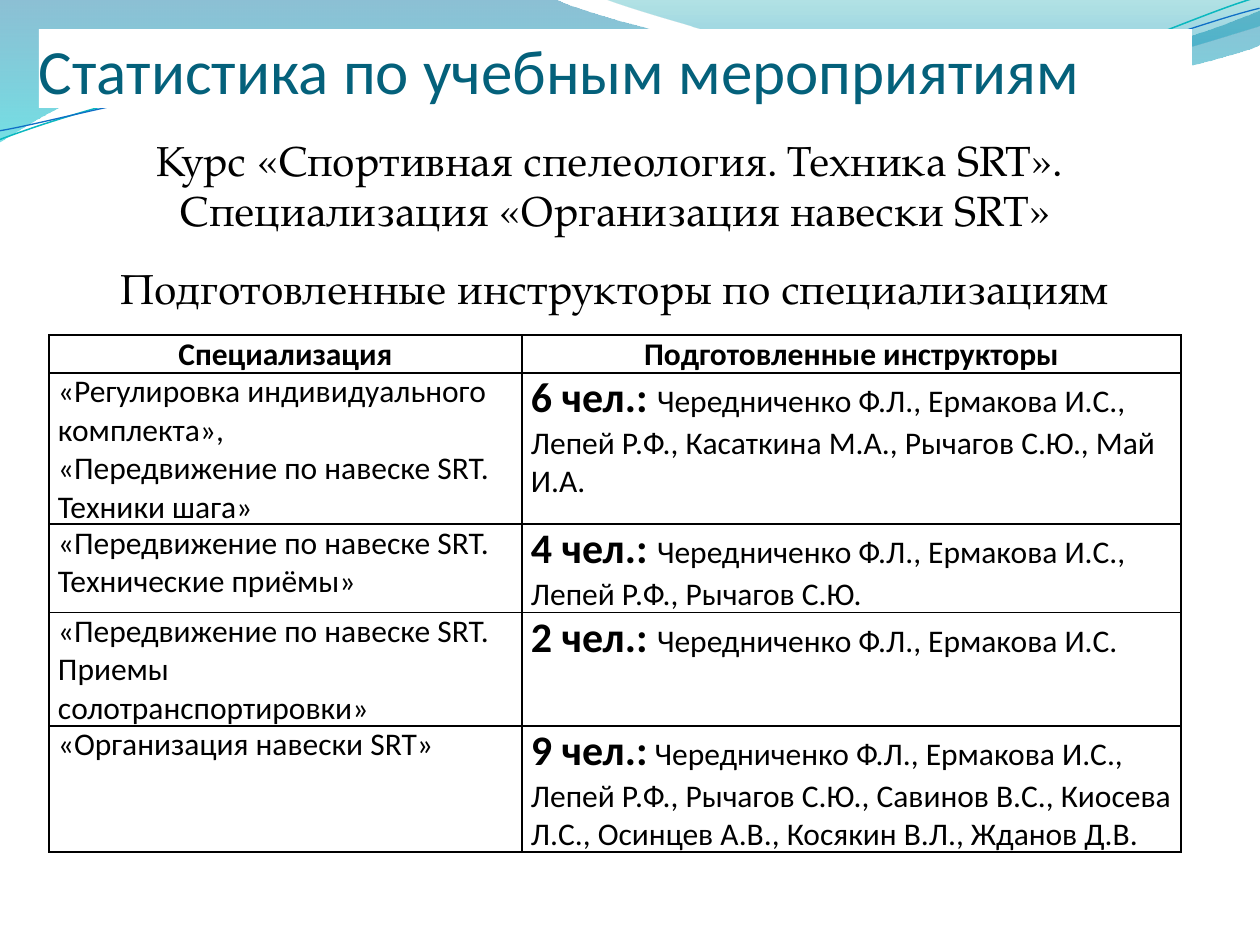
import pptx
import pptx.dml.color
import pptx.enum.shapes
import pptx.enum.text
import pptx.oxml
import pptx.oxml.ns
import pptx.util
from lxml import etree

RGBColor = pptx.dml.color.RGBColor
ALIGN = pptx.enum.text.PP_ALIGN
ANCHOR = pptx.enum.text.MSO_ANCHOR
qn = pptx.oxml.ns.qn

PX = 914400 / 126
BLACK = RGBColor(0x00, 0x00, 0x00)
WHITE = RGBColor(0xFF, 0xFF, 0xFF)
TITLE_COLOR = RGBColor(0x04, 0x61, 0x7B)
DEEP_BLUE = RGBColor(0x00, 0x74, 0xA1)
TURQUOISE = RGBColor(0x00, 0xC6, 0xCF)
SEA_GREEN = RGBColor(0x00, 0xA1, 0xA9)
SKY_BLUE = RGBColor(0x00, 0x8B, 0xBF)
THREAD_TEAL = RGBColor(0x0A, 0xB8, 0xBF)
THREAD_BLUE = RGBColor(0x0F, 0x6F, 0xC6)
SANS = "Calibri"
SERIF = "TeX Gyre Pagella"

# Content
TITLE = "Статистика по учебным мероприятиям"
COURSE = ["Курс «Спортивная спелеология. Техника SRT». ",
          "Специализация «Организация навески SRT»"]
SUBTITLE = ["Подготовленные инструкторы по специализациям"]
HEADERS = ["Специализация", "Подготовленные инструкторы"]
# Specialisation paragraphs, head count, names
ROWS = [
    (["«Регулировка индивидуального комплекта»,",
      "«Передвижение по навеске SRT. Техники шага»"],
     "6 чел.: ",
     "Чередниченко Ф.Л., Ермакова И.С., Лепей Р.Ф., Касаткина М.А., Рычагов С.Ю., Май И.А."),
    (["«Передвижение по навеске SRT. Технические приёмы»"],
     "4 чел.: ",
     "Чередниченко Ф.Л., Ермакова И.С., Лепей Р.Ф., Рычагов С.Ю."),
    (["«Передвижение по навеске SRT. Приемы\nсолотранспортировки»"],
     "2 чел.: ",
     "Чередниченко Ф.Л., Ермакова И.С."),
    (["«Организация навески SRT»"],
     "9 чел.:",
     " Чередниченко Ф.Л., Ермакова И.С., Лепей Р.Ф., Рычагов С.Ю., Савинов В.С., "
     "Киосева Л.С., Осинцев А.В., Косякин В.Л., Жданов Д.В."),
]
COLUMN_WIDTHS = [473, 659]
ROW_HEIGHTS = [23, 67, 45, 45, 89]  # minimum heights, rows grow with their text
TABLE_HEIGHT = 517

# Outlines in px: a pair is a straight step, a six is a Bezier curve
WAVES = [
    ([(0, 0), (554, -1), (600, 21, 837, 79, 955, 79), (1075, 79, 1207, 33, 1260, 11),
      (1261, 45), (1239, 55, 1096, 96, 940, 95), (784, 95, 481, 35, 324, 43),
      (161, 45, 58, 105, -1, 142), (0, 0)],
     [(0, DEEP_BLUE, 45), (1, TURQUOISE, 55)]),
    ([(604, -1), (641, 14, 859, 78, 969, 82), (1079, 87, 1211, 40, 1260, 26), (1260, 0),
      (604, -1)],
     [(0, SEA_GREEN, 30), (0.8, SKY_BLUE, 45)]),
]
THREAD_TILT = 357.3
THREADS = [
    ([(-3, 110), (59, 90, 199, 52, 350, 53), (499, 53, 745, 117, 896, 114),
      (1048, 109, 1184, 45, 1260, 27)], THREAD_TEAL, 0.85),
    ([(-2, 101), (57, 94, 207, 57, 357, 58), (509, 58, 750, 112, 902, 108),
      (1052, 104, 1188, 52, 1262, 38)], THREAD_BLUE, 0.75),
]


def px(*values):
    return [round(value * PX) for value in values]


def add_outline(slide, steps, close):
    """Lay out every point as a line step, then join each three into a curve."""
    points = [tuple(px(*step[i:i + 2])) for step in steps for i in range(0, len(step), 2)]
    builder = slide.shapes.build_freeform(*points[0], scale=1.0)
    builder.add_line_segments(points[1:], close=close)
    shape = builder.convert_to_shape()
    shape.shadow.inherit = False
    lines = shape.element.spPr.iter(qn("a:lnTo"))
    lines = iter(list(lines))
    for step in steps[1:]:
        line = next(lines)
        if len(step) == 6:
            curve = etree.Element(qn("a:cubicBezTo"))
            line.addprevious(curve)
            for corner in (line, next(lines), next(lines)):
                curve.append(corner[0])
                corner.getparent().remove(corner)
    return shape


def add_wave(slide, steps, stops):
    shape = add_outline(slide, steps, True)
    shape.line.fill.background()
    shape.fill.gradient()
    shape.fill.gradient_angle = 270
    for stop, (position, color, _) in zip(shape.fill.gradient_stops, stops):
        stop.position = position
        stop.color.rgb = color
    colors = shape.element.spPr.iter(qn("a:srgbClr"))
    for color, (_, _, opacity) in zip(colors, stops):
        etree.SubElement(color, qn("a:alpha"), val=str(opacity * 1000))


def add_thread(slide, steps, color, width):
    shape = add_outline(slide, steps, False)
    shape.rotation = THREAD_TILT
    shape.fill.background()
    shape.line.color.rgb = color
    shape.line.width = pptx.util.Pt(width)


def add_run(paragraph, text, size, font, color=BLACK, bold=False):
    for i, line in enumerate(text.split("\n")):
        if i:
            paragraph.add_line_break()
        run = paragraph.add_run()
        run.text = line
        run.font.size = pptx.util.Pt(size)
        run.font.name = font
        run.font.bold = bold
        run.font.color.rgb = color


def write(frame, paragraphs, align, size, font, color=BLACK, bold=False):
    for i, text in enumerate(paragraphs):
        paragraph = frame.add_paragraph() if i else frame.paragraphs[0]
        paragraph.alignment = align
        add_run(paragraph, text, size, font, color, bold)


def add_caption(slide, paragraphs, top, height):
    frame = slide.shapes.add_textbox(*px(39, top, 1152, height)).text_frame
    frame.word_wrap = True
    frame.auto_size = pptx.enum.text.MSO_AUTO_SIZE.SHAPE_TO_FIT_TEXT
    write(frame, paragraphs, ALIGN.CENTER, 24, SERIF)


def add_title(slide):
    shape = slide.shapes.add_shape(pptx.enum.shapes.MSO_SHAPE.RECTANGLE, *px(39, 29, 1153, 79))
    shape.shadow.inherit = False
    shape.fill.solid()
    shape.fill.fore_color.rgb = WHITE
    shape.line.fill.background()
    frame = shape.text_frame
    frame.word_wrap = True
    frame.vertical_anchor = ANCHOR.BOTTOM
    frame.margin_left = frame.margin_right = frame.margin_bottom = 0
    write(frame, [TITLE], ALIGN.LEFT, 36, SANS, TITLE_COLOR)
    frame.paragraphs[0].line_spacing = 0.9


def style_cell(cell):
    cell.margin_left = cell.margin_right = px(9)[0]
    cell.margin_top = cell.margin_bottom = 0
    properties = cell._tc.get_or_add_tcPr()
    for side in ("a:lnL", "a:lnR", "a:lnT", "a:lnB"):
        line = etree.SubElement(properties, qn(side), w=str(pptx.util.Pt(1)))
        fill = etree.SubElement(line, qn("a:solidFill"))
        etree.SubElement(fill, qn("a:srgbClr"), val=str(BLACK))
    cell.fill.background()


def add_instructor_table(slide):
    frame = slide.shapes.add_table(len(ROW_HEIGHTS), len(COLUMN_WIDTHS),
                                   *px(49, 335, sum(COLUMN_WIDTHS), TABLE_HEIGHT))
    table = frame.table
    for column, width in zip(table.columns, px(*COLUMN_WIDTHS)):
        column.width = width
    for row, height in zip(table.rows, px(*ROW_HEIGHTS)):
        row.height = height
    frame.height = px(TABLE_HEIGHT)[0]
    for cell in table.iter_cells():
        style_cell(cell)
    for i, header in enumerate(HEADERS):
        cell = table.cell(0, i)
        cell.vertical_anchor = ANCHOR.MIDDLE
        write(cell.text_frame, [header], ALIGN.CENTER, 18, SANS, bold=True)
    for i, (topics, head_count, names) in enumerate(ROWS, 1):
        write(table.cell(i, 0).text_frame, topics, ALIGN.LEFT, 18, SANS)
        people = table.cell(i, 1).text_frame
        write(people, [head_count], ALIGN.LEFT, 24, SANS, bold=True)
        add_run(people.paragraphs[0], names, 18, SANS)


def main():
    presentation = pptx.Presentation()
    presentation.slide_width, presentation.slide_height = px(1260, 945)
    slide = presentation.slides.add_slide(presentation.slide_layouts[6])
    # Decorative header
    for steps, stops in WAVES:
        add_wave(slide, steps, stops)
    for steps, color, width in THREADS:
        add_thread(slide, steps, color, width)
    # Headings and table
    add_caption(slide, SUBTITLE, 256, 63)
    add_title(slide)
    add_caption(slide, COURSE, 128, 115)
    add_instructor_table(slide)
    presentation.save("out.pptx")


if __name__ == "__main__":
    main()
